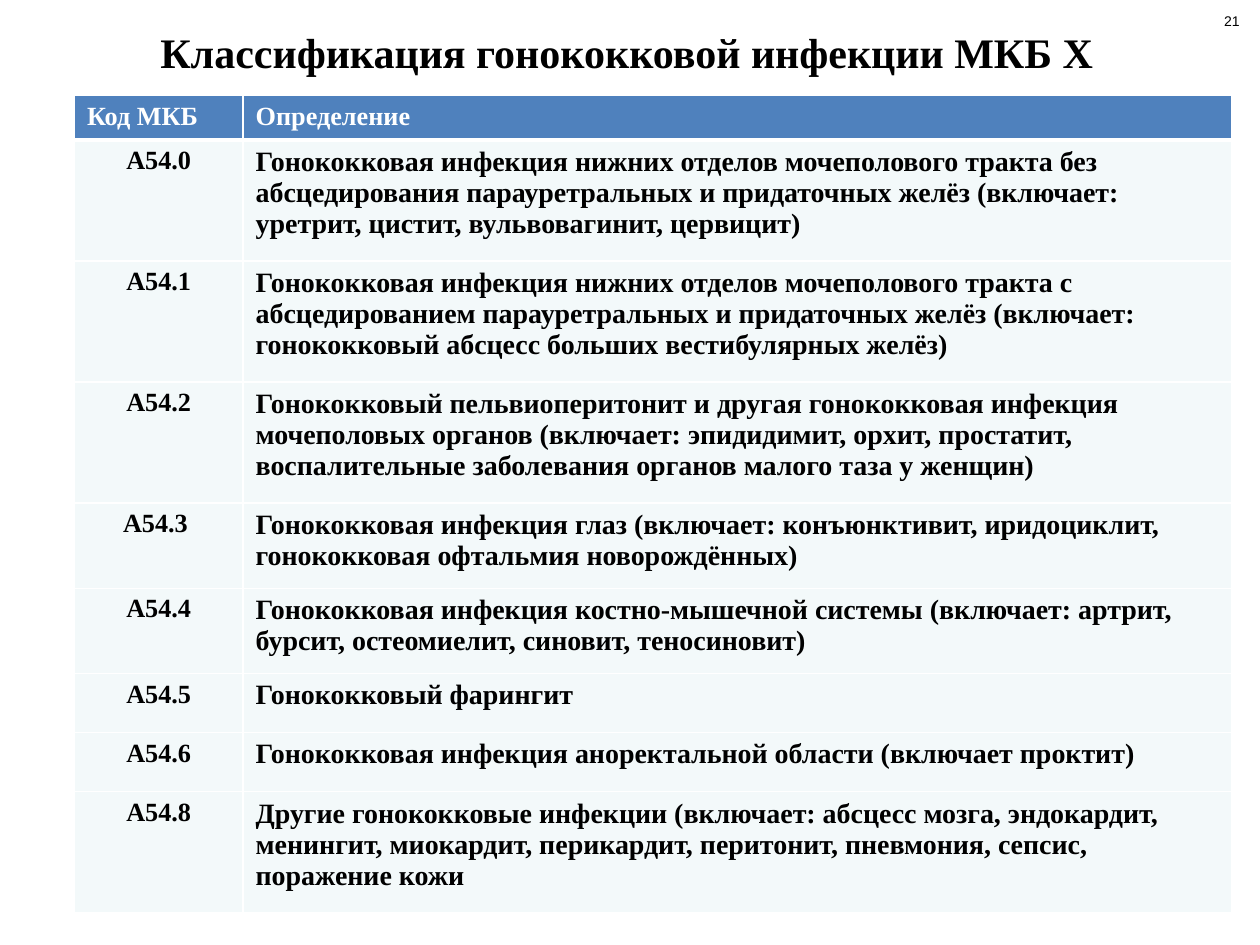
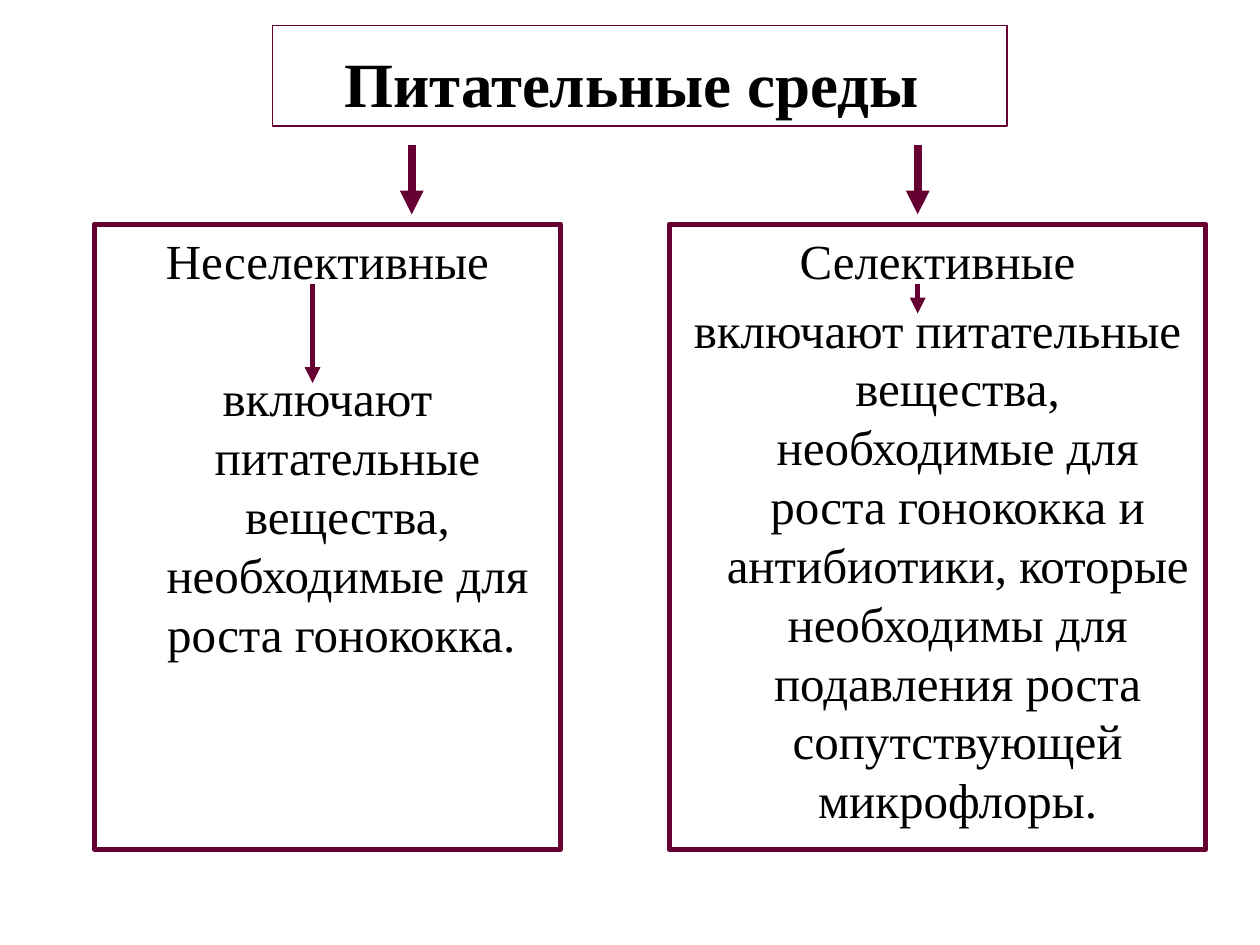
from lxml import etree
from pptx import Presentation
from pptx import util as u
from pptx.dml.color import RGBColor
from pptx.enum import shapes, text
from pptx.oxml import ns

COLORS = {
    "ink": "000000",
    "white": "FFFFFF",
    "header": "4F81BD",
    "row": "F3F9FA",
    "frame": "660033",
}
SERIF, SANS = "Times New Roman", "Arial"

ICD_TITLE = "Классификация гонококковой инфекции МКБ Х"
PAGE_NUMBER = "21"
ICD_HEADER = ("Код МКБ", "Определение")
# code, definition, number of text lines
ICD_ROWS = [
    ("А54.0", "Гонококковая инфекция нижних отделов мочеполового тракта без "
     "абсцедирования парауретральных и придаточных желёз (включает: "
     "уретрит, цистит, вульвовагинит, цервицит)", 3),
    ("А54.1", "Гонококковая инфекция нижних отделов мочеполового тракта с "
     "абсцедированием парауретральных и придаточных желёз (включает: "
     "гонококковый абсцесс больших вестибулярных желёз)", 3),
    ("А54.2", "Гонококковый пельвиоперитонит и другая гонококковая инфекция "
     "мочеполовых органов (включает: эпидидимит, орхит, простатит, "
     "воспалительные заболевания органов малого таза у женщин)", 3),
    ("А54.3 ", "Гонококковая инфекция глаз (включает: конъюнктивит, иридоциклит, "
     "гонококковая офтальмия новорождённых)", 2),
    ("А54.4", "Гонококковая инфекция костно-мышечной системы (включает: артрит, "
     "бурсит, остеомиелит, синовит, теносиновит)", 2),
    ("А54.5", "Гонококковый фарингит", 1),
    ("А54.6", "Гонококковая инфекция аноректальной области (включает проктит)", 1),
    ("А54.8", "Другие гонококковые инфекции (включает: абсцесс мозга, эндокардит, "
     "менингит, миокардит, перикардит, перитонит, пневмония, сепсис, "
     "поражение кожи", 3),
]
HEADER_HEIGHT = 0.79
ROW_HEIGHTS = {1: 1.19, 2: 1.72, 3: 2.44}  # cm by number of lines
COLUMN_WIDTHS = (3.4, 19.94)

MEDIA_TITLE = "Питательные среды "
# gap: points before the description; arrows: x of the outer, x and end of the inner
MEDIA = [
    {"name": "Неселективные",
     "description": "включают питательные вещества, необходимые для роста гонококка. ",
     "left": 1.9, "width": 9.4, "gap": 45, "outer_x": 8.3, "inner_x": 6.3, "inner_end": 7.72},
    {"name": "Селективные",
     "description": "включают питательные вещества, необходимые для роста гонококка и "
     "антибиотики, которые необходимы для подавления роста сопутствующей микрофлоры.",
     "left": 13.49, "width": 10.82, "gap": 5.6, "outer_x": 18.5, "inner_x": 18.5, "inner_end": 6.32},
]
MEDIA_TOP, MEDIA_HEIGHT = 4.52, 12.6
OUTER_ARROW = (2.92, 4.32)
INNER_ARROW_START = 5.72
HANGING = u.Cm(0.81)


def rgb(color):
    return RGBColor.from_string(COLORS[color])


def cm(*lengths):
    return [u.Cm(length) for length in lengths]


def write(paragraph, words, size, color="ink", font=SERIF, bold=False, align=text.PP_ALIGN.CENTER):
    paragraph.alignment = align
    run = paragraph.add_run()
    run.text = words
    run.font.name, run.font.size, run.font.bold = font, u.Pt(size), bold
    run.font.color.rgb = rgb(color)


def add_label(slide, box, words, size, inset=True, **style):
    frame = slide.shapes.add_textbox(*cm(*box)).text_frame
    frame.word_wrap = True
    if not inset:
        frame.margin_left = frame.margin_right = frame.margin_top = frame.margin_bottom = 0
    write(frame.paragraphs[0], words, size, **style)
    return frame


def add_frame(slide, box, weight, anchor):
    """Outlined, unfilled rectangle; returns its text frame."""
    shape = slide.shapes.add_shape(shapes.MSO_SHAPE.RECTANGLE, *cm(*box))
    shape.shadow.inherit = False
    shape.fill.background()
    shape.line.color.rgb = rgb("frame")
    shape.line.width = u.Pt(weight)
    shape.text_frame.word_wrap = True
    shape.text_frame.vertical_anchor = anchor
    return shape.text_frame


def add_down_arrow(slide, x, top, bottom, weight):
    arrow = slide.shapes.add_connector(shapes.MSO_CONNECTOR.STRAIGHT, *cm(x, top, x, bottom))
    arrow.line.color.rgb = rgb("frame")
    arrow.line.width = u.Pt(weight)
    etree.SubElement(arrow.line._get_or_add_ln(), ns.qn("a:tailEnd"), type="triangle")
    etree.SubElement(arrow._element.spPr, ns.qn("a:effectLst"))


def style_cell(cell, fill, top=1, bottom=1):
    """White borders (weights in points) and a solid fill."""
    props = cell._tc.get_or_add_tcPr()
    for side, weight in (("L", 1), ("R", 1), ("T", top), ("B", bottom)):
        line = etree.SubElement(props, ns.qn(f"a:ln{side}"), w=str(u.Pt(weight)))
        solid = etree.SubElement(line, ns.qn("a:solidFill"))
        etree.SubElement(solid, ns.qn("a:srgbClr"), val=COLORS["white"])
    cell.fill.solid()
    cell.fill.fore_color.rgb = rgb(fill)


def build_classification(slide):
    add_label(slide, (0, 0.53, 25.27, 1.02), ICD_TITLE, 24, inset=False, bold=True)

    heights = [HEADER_HEIGHT] + [ROW_HEIGHTS[lines] for *_, lines in ICD_ROWS]
    table = slide.shapes.add_table(
        len(heights), len(COLUMN_WIDTHS),
        *cm(1.5, 1.93, sum(COLUMN_WIDTHS), sum(heights))).table
    table.horz_banding = False
    for column, width in zip(table.columns, COLUMN_WIDTHS):
        column.width = u.Cm(width)
    for row, height in zip(table.rows, heights):
        row.height = u.Cm(height)

    left, center = text.PP_ALIGN.LEFT, text.PP_ALIGN.CENTER
    for cell, heading in zip(table.rows[0].cells, ICD_HEADER):
        style_cell(cell, "header", bottom=3)
        write(cell.text_frame.paragraphs[0], heading, 15, "white", bold=True, align=left)
    for index, (code, definition, _) in enumerate(ICD_ROWS, 1):
        for column, (words, size, align) in enumerate(((code, 15, center), (definition, 16, left))):
            cell = table.cell(index, column)
            style_cell(cell, "row", top=3 if index == 1 else 1)
            write(cell.text_frame.paragraphs[0], words, size, bold=True, align=align)

    number = add_label(slide, (24.39, 0, 0.89, 0.86), PAGE_NUMBER, 8, font=SANS)
    number.vertical_anchor = text.MSO_ANCHOR.MIDDLE


def build_media(slide):
    title = add_frame(slide, (5.49, 0.51, 14.81, 2.03), 0.75, text.MSO_ANCHOR.BOTTOM)
    write(title.paragraphs[0], MEDIA_TITLE, 36, bold=True)

    for medium in MEDIA:
        box = (medium["left"], MEDIA_TOP, medium["width"], MEDIA_HEIGHT)
        frame = add_frame(slide, box, 3, text.MSO_ANCHOR.TOP)
        name, description = frame.paragraphs[0], frame.add_paragraph()
        for paragraph, words in ((name, medium["name"]), (description, medium["description"])):
            props = paragraph._p.get_or_add_pPr()
            props.set("marL", str(HANGING))
            props.set("indent", str(-HANGING))
            write(paragraph, words, 28)
        description.space_before = u.Pt(medium["gap"])

    for medium in MEDIA:
        add_down_arrow(slide, medium["outer_x"], *OUTER_ARROW, 4.5)
        add_down_arrow(slide, medium["inner_x"], INNER_ARROW_START, medium["inner_end"], 3)


def main():
    deck = Presentation()
    deck.slide_width, deck.slide_height = cm(25.4, 19.05)
    for build in (build_classification, build_media):
        build(deck.slides.add_slide(deck.slide_layouts[6]))
    deck.save("out.pptx")


if __name__ == "__main__":
    main()
